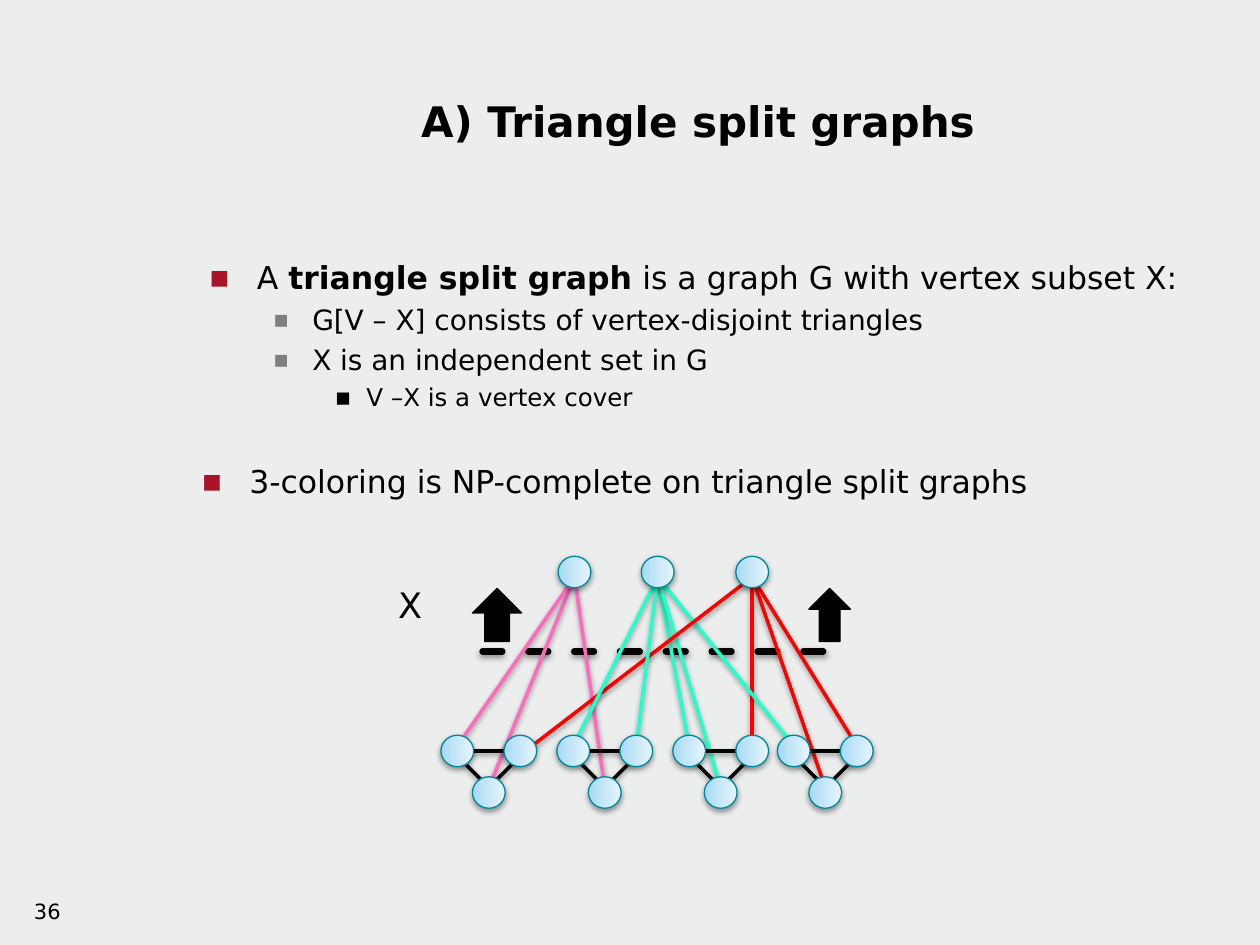
from copy import deepcopy

from lxml.etree import SubElement
from pptx import Presentation
from pptx.dml.color import RGBColor
from pptx.enum.dml import MSO_LINE
from pptx.enum.shapes import MSO_CONNECTOR, MSO_SHAPE
from pptx.enum.text import MSO_ANCHOR, PP_ALIGN
from pptx.oxml.ns import qn
from pptx.util import Inches, Pt

FONT = "DejaVu Sans"
BLACK = RGBColor(0x00, 0x00, 0x00)
BACKGROUND = RGBColor(0xEC, 0xED, 0xED)
CRIMSON = RGBColor(0xAA, 0x13, 0x28)
GRAY = RGBColor(0x7F, 0x7F, 0x7F)
RED = RGBColor(0xFF, 0x00, 0x00)
GREEN = RGBColor(0x21, 0xFF, 0xCB)
PINK = RGBColor(0xFE, 0x6B, 0xBC)
VERTEX_LINE = RGBColor(0x00, 0x87, 0x9F)
VERTEX_STOPS = [
    (0, RGBColor(0xA2, 0xDA, 0xF2)),
    (0.35, RGBColor(0xBF, 0xE4, 0xF5)),
    (1, RGBColor(0xE6, 0xF5, 0xFC)),
]

BULLETS = [
    (0, 0.44, 0.38, 18, 0, CRIMSON,
     [("A ", False), ("triangle split graph", True), (" is a graph G with vertex subset X:", False)]),
    (1, 0.88, 0.31, 16, 3.7, GRAY, [("G[V – X] consists of vertex-disjoint triangles", False)]),
    (1, 0.88, 0.31, 16, 3.7, GRAY, [("X is an independent set in G", False)]),
    (2, 1.31, 0.25, 14, 3.3, BLACK, [("V –X is a vertex cover", False)]),
    (0, 0.38, 0.38, 18, 29, CRIMSON, [("3-coloring is NP-complete on triangle split graphs", False)]),
]

INDEPENDENT_XS = {PINK: 4.56, GREEN: 5.22, RED: 5.97}
TRIANGLE_XS = [3.88, 4.8, 5.72, 6.55]
HALF_BASE = 0.25
INDEPENDENT_Y, BASE_Y, APEX_Y = 4.54, 5.96, 6.29
VERTEX_REACH = 0.04
JOINTS = {
    "left": (-HALF_BASE, BASE_Y - VERTEX_REACH),
    "right": (HALF_BASE, BASE_Y - VERTEX_REACH),
    "right side": (HALF_BASE + VERTEX_REACH, BASE_Y),
    "apex": (0, APEX_Y - VERTEX_REACH),
}
CROSS_EDGES = [
    (RED, 3, "right"), (RED, 3, "apex"), (RED, 2, "right"),
    (GREEN, 2, "left"), (GREEN, 3, "left"), (GREEN, 2, "apex"),
    (PINK, 0, "apex"), (PINK, 0, "left"), (PINK, 1, "apex"),
    (RED, 0, "right side"), (GREEN, 1, "left"), (GREEN, 1, "right"),
]


def add_shadow(shape):
    effects = SubElement(shape._element.spPr, qn("a:effectLst"))
    shadow = SubElement(effects, qn("a:outerShdw"), blurRad="40000", dist="20000",
                        dir="5400000", rotWithShape="0")
    color = SubElement(shadow, qn("a:srgbClr"), val=str(BLACK))
    SubElement(color, qn("a:alpha"), val="38000")


def style_text(paragraph, size, align=PP_ALIGN.LEFT, bold=False):
    paragraph.alignment = align
    paragraph.font.name = FONT
    paragraph.font.size = Pt(size)
    paragraph.font.bold = bold
    paragraph.font.color.rgb = BLACK


def add_label(slide, text, left, top, width, height, size, align, anchor):
    frame = slide.shapes.add_textbox(
        Inches(left), Inches(top), Inches(width), Inches(height)).text_frame
    frame.word_wrap = True
    frame.vertical_anchor = anchor
    frame.text = text
    style_text(frame.paragraphs[0], size, align)


def set_bullet(paragraph, indent, hanging, color, size_percent):
    properties = paragraph._p.get_or_add_pPr()
    properties.set("marL", str(Inches(indent)))
    properties.set("indent", str(-Inches(hanging)))
    bullet_color = SubElement(properties, qn("a:buClr"))
    SubElement(bullet_color, qn("a:srgbClr"), val=str(color))
    SubElement(properties, qn("a:buSzPct"), val=str(size_percent * 1000))
    SubElement(properties, qn("a:buFont"), typeface=FONT)
    SubElement(properties, qn("a:buChar"), char="▪")


def add_title(slide):
    title = slide.shapes.title
    title.left, title.top, title.width, title.height = (
        Inches(1.5), Inches(0.33), Inches(8.08), Inches(1.25))
    title.text_frame.text = "A) Triangle split graphs"
    title.text_frame.vertical_anchor = MSO_ANCHOR.MIDDLE
    style_text(title.text_frame.paragraphs[0], 24, PP_ALIGN.CENTER, True)


def add_definition(slide):
    frame = slide.shapes.add_textbox(
        Inches(1.5), Inches(2), Inches(8.08), Inches(4.33)).text_frame
    frame.word_wrap = True
    for index, (level, indent, hanging, size, before, color, parts) in enumerate(BULLETS):
        paragraph = frame.add_paragraph() if index else frame.paragraphs[0]
        paragraph.level = level
        set_bullet(paragraph, indent, hanging, color, 85 if level == 1 else 100)
        paragraph.space_before = Pt(before)
        style_text(paragraph, size)
        for text, bold in parts:
            run = paragraph.add_run()
            run.text = text
            if bold:
                run.font.bold = True


def add_edge(slide, start, end, color, width=2, dash=None):
    edge = slide.shapes.add_connector(
        MSO_CONNECTOR.STRAIGHT, *(Inches(value) for value in (*start, *end)))
    edge.line.color.rgb = color
    edge.line.width = Pt(width)
    if dash:
        edge.line.dash_style = dash
        edge._element.spPr.find(qn("a:ln")).set("cap", "rnd")
    add_shadow(edge)


def add_up_arrow(slide, left, width):
    arrow = slide.shapes.add_shape(
        MSO_SHAPE.UP_ARROW, Inches(left), Inches(4.67), Inches(width), Inches(0.42))
    arrow.shadow.inherit = False
    arrow.fill.solid()
    arrow.fill.fore_color.rgb = BLACK
    arrow.line.color.rgb = BLACK
    arrow.line.width = Pt(0.75)


def add_vertex(slide, x, y):
    width, height = 0.26, 0.25
    vertex = slide.shapes.add_shape(
        MSO_SHAPE.OVAL, Inches(x - width / 2), Inches(y - height / 2),
        Inches(width), Inches(height))
    vertex.fill.gradient()
    vertex.fill.gradient_angle = 0
    stop_list = vertex._element.spPr.find(qn("a:gradFill")).find(qn("a:gsLst"))
    stop_list.insert(1, deepcopy(stop_list[0]))
    for stop, (position, color) in zip(vertex.fill.gradient_stops, VERTEX_STOPS):
        stop.position = position
        stop.color.rgb = color
    vertex.line.color.rgb = VERTEX_LINE
    vertex.line.width = Pt(0.75)
    add_shadow(vertex)


def add_triangle(slide, x):
    left, right = x - HALF_BASE, x + HALF_BASE
    apex = (x, APEX_Y - VERTEX_REACH)
    add_edge(slide, (left + VERTEX_REACH, BASE_Y), (right - VERTEX_REACH, BASE_Y), BLACK)
    for corner_x in (right, left):
        add_edge(slide, (corner_x, BASE_Y + VERTEX_REACH), apex, BLACK)
    for corner in ((left, BASE_Y), (x, APEX_Y), (right, BASE_Y)):
        add_vertex(slide, *corner)


def add_graph(slide):
    add_edge(slide, (3.83, 5.17), (6.67, 5.17), BLACK, 3.75, MSO_LINE.DASH)
    add_up_arrow(slide, 3.75, 0.39)
    add_up_arrow(slide, 6.42, 0.33)
    add_label(slide, "X", 2.42, 4.58, 1.67, 0.44, 20, PP_ALIGN.CENTER, MSO_ANCHOR.MIDDLE)
    for color, triangle, joint in CROSS_EDGES:
        offset, y = JOINTS[joint]
        add_edge(slide, (INDEPENDENT_XS[color], INDEPENDENT_Y + VERTEX_REACH),
                 (TRIANGLE_XS[triangle] + offset, y), color)
    for x in TRIANGLE_XS:
        add_triangle(slide, x)
    for x in INDEPENDENT_XS.values():
        add_vertex(slide, x, INDEPENDENT_Y)


def main():
    presentation = Presentation()
    presentation.slide_width = Inches(10)
    presentation.slide_height = Inches(7.5)
    slide = presentation.slides.add_slide(presentation.slide_layouts[5])
    slide.background.fill.solid()
    slide.background.fill.fore_color.rgb = BACKGROUND
    add_label(slide, "36", 0, 7.08, 0.58, 0.42, 12, PP_ALIGN.RIGHT, MSO_ANCHOR.TOP)
    add_title(slide)
    add_definition(slide)
    add_graph(slide)
    presentation.save("out.pptx")


if __name__ == "__main__":
    main()
